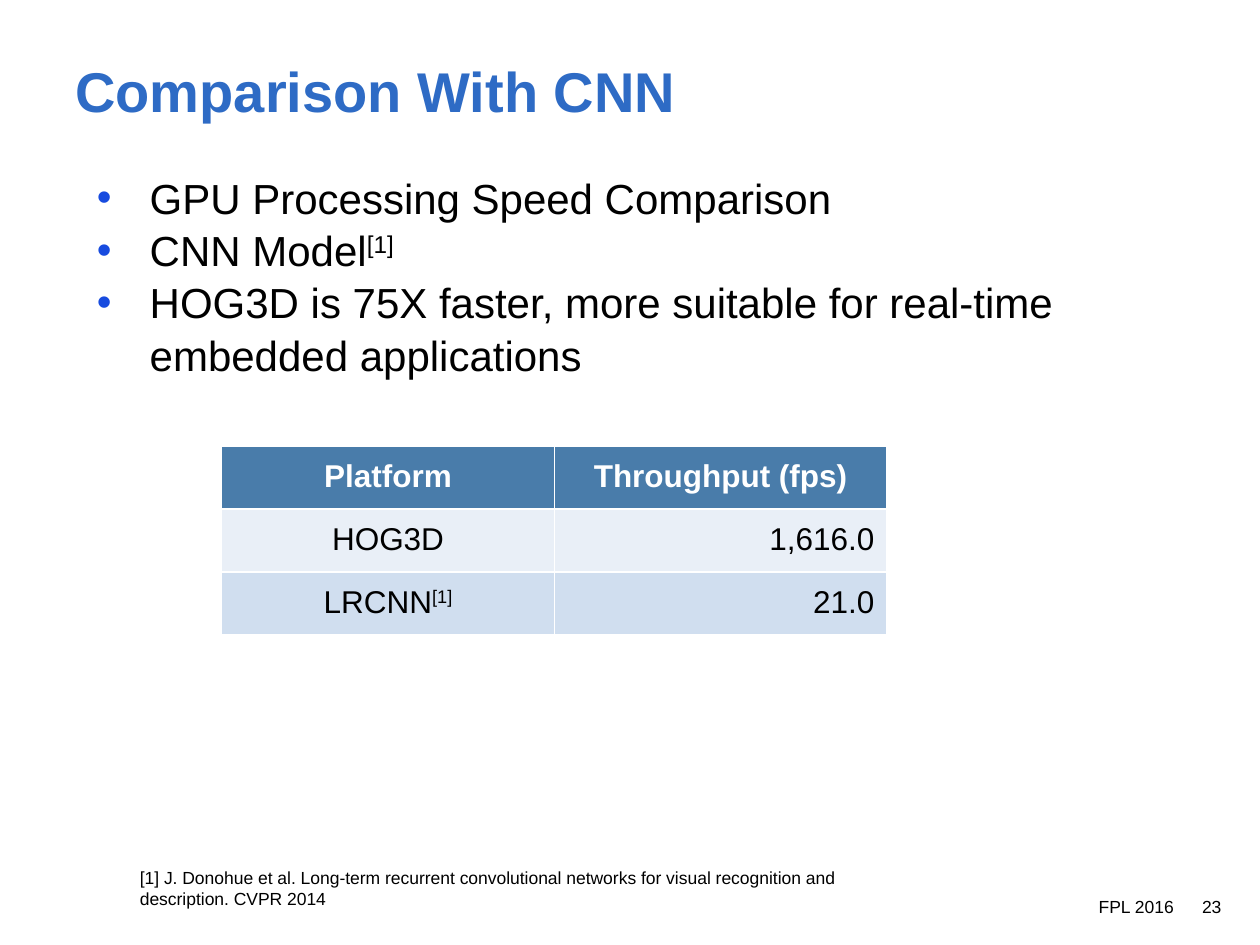
from lxml import etree
from pptx import Presentation
from pptx import util as u
from pptx.dml.color import RGBColor
from pptx.enum import text as t
from pptx.oxml.ns import qn

COLORS = {
    "title": "2E6BC5", "text": "000000", "bullet": "174BDF", "white": "FFFFFF",
    "header": "497CAA", "light row": "E9EFF7", "dark row": "D0DEEF",
}
COLUMNS, ROWS = 100, 75
ALIGN = t.PP_ALIGN


def rgb(name):
    return RGBColor.from_string(COLORS[name])


def write(paragraph, content, size=10, color="text", bold=False, align=ALIGN.LEFT, spacing=None):
    """Fill a paragraph; whatever follows a ^ is superscript."""
    paragraph.alignment = align
    paragraph.line_spacing = spacing
    for index, part in enumerate(content.split("^")):
        run = paragraph.add_run()
        run.text = part
        run.font.name = "Arial"
        run.font.size = u.Pt(size)
        run.font.bold = bold
        run.font.color.rgb = rgb(color)
        if index:
            run.font._element.set("baseline", "30000")


def add_bullet(paragraph, indent=0.5, hanging=0.42):
    properties = paragraph._p.get_or_add_pPr()
    properties.set("marL", str(u.Inches(indent)))
    properties.set("indent", str(-u.Inches(hanging)))
    color = etree.SubElement(properties, qn("a:buClr"))
    etree.SubElement(color, qn("a:srgbClr"), val=COLORS["bullet"])
    etree.SubElement(properties, qn("a:buFont"), typeface="Arial")
    etree.SubElement(properties, qn("a:buChar"), char="•")


def add_borders(cell, width=1):
    properties = cell._tc.get_or_add_tcPr()
    for index, side in enumerate(("lnL", "lnR", "lnT", "lnB")):
        line = etree.Element(qn("a:" + side), w=str(u.Pt(width)))
        fill = etree.SubElement(line, qn("a:solidFill"))
        etree.SubElement(fill, qn("a:srgbClr"), val=COLORS["white"])
        properties.insert(index, line)


def set_margins(target, inches):
    target.margin_left = target.margin_right = u.Inches(inches)
    target.margin_top = target.margin_bottom = u.Inches(inches)


class SlideBuilder:
    def __init__(self, presentation):
        self.slide = presentation.slides.add_slide(presentation.slide_layouts[6])
        self.column = presentation.slide_width / COLUMNS
        self.row = presentation.slide_height / ROWS

    def place(self, left, top, width, height):
        """Turn grid columns and rows into slide lengths."""
        return (round(left * self.column), round(top * self.row),
                round(width * self.column), round(height * self.row))

    def text(self, area, lines, margin=0.05, anchor=t.MSO_ANCHOR.TOP, wrap=True,
             bullets=False, **style):
        frame = self.slide.shapes.add_textbox(*self.place(*area)).text_frame
        frame.word_wrap = wrap
        frame.vertical_anchor = anchor
        set_margins(frame, margin)
        for index, line in enumerate(lines):
            paragraph = frame.add_paragraph() if index else frame.paragraphs[0]
            if bullets:
                add_bullet(paragraph)
            write(paragraph, line, **style)

    def table(self, area, records, fills, aligns, size):
        table = self.slide.shapes.add_table(
            len(records), len(records[0]), *self.place(*area)).table
        for row, (record, fill) in enumerate(zip(records, fills)):
            header = row == 0
            for column, content in enumerate(record):
                cell = table.cell(row, column)
                cell.fill.solid()
                cell.fill.fore_color.rgb = rgb(fill)
                set_margins(cell, 0.1)
                add_borders(cell)
                write(cell.text_frame.paragraphs[0], content, size=size, bold=header,
                      color="white" if header else "text",
                      align=ALIGN.CENTER if header else aligns[column])


def main():
    presentation = Presentation()
    presentation.slide_width, presentation.slide_height = u.Inches(10), u.Inches(7.5)
    builder = SlideBuilder(presentation)

    builder.text((5, 2.5, 81.7, 8.3), ["Comparison With CNN"], margin=0.1,
                 anchor=t.MSO_ANCHOR.BOTTOM, size=32, color="title", bold=True)
    builder.text((5.9, 12.5, 90, 19.4), [
        "GPU Processing Speed Comparison",
        "CNN Model^[1]",
        "HOG3D is 75X faster, more suitable for real-time embedded applications",
    ], margin=0.1, bullets=True, size=24, spacing=1.04)
    builder.table((17.6, 35.4, 52.8, 12.5), [
        ("Platform", "Throughput (fps)"),
        ("HOG3D", "1,616.0"),
        ("LRCNN^[1]", "21.0"),
    ], fills=("header", "light row", "dark row"), aligns=(ALIGN.CENTER, ALIGN.RIGHT), size=18)
    builder.text((10.6, 68.3, 58.1, 4), [
        "[1] J. Donohue et al. Long-term recurrent convolutional networks "
        "for visual recognition and description. CVPR 2014"])
    builder.text((86.7, 70.6, 7.1, 2.5), ["FPL 2016"])
    builder.text((94.9, 70.6, 2.7, 2.5), ["23"], wrap=False)

    presentation.save("out.pptx")


if __name__ == "__main__":
    main()
